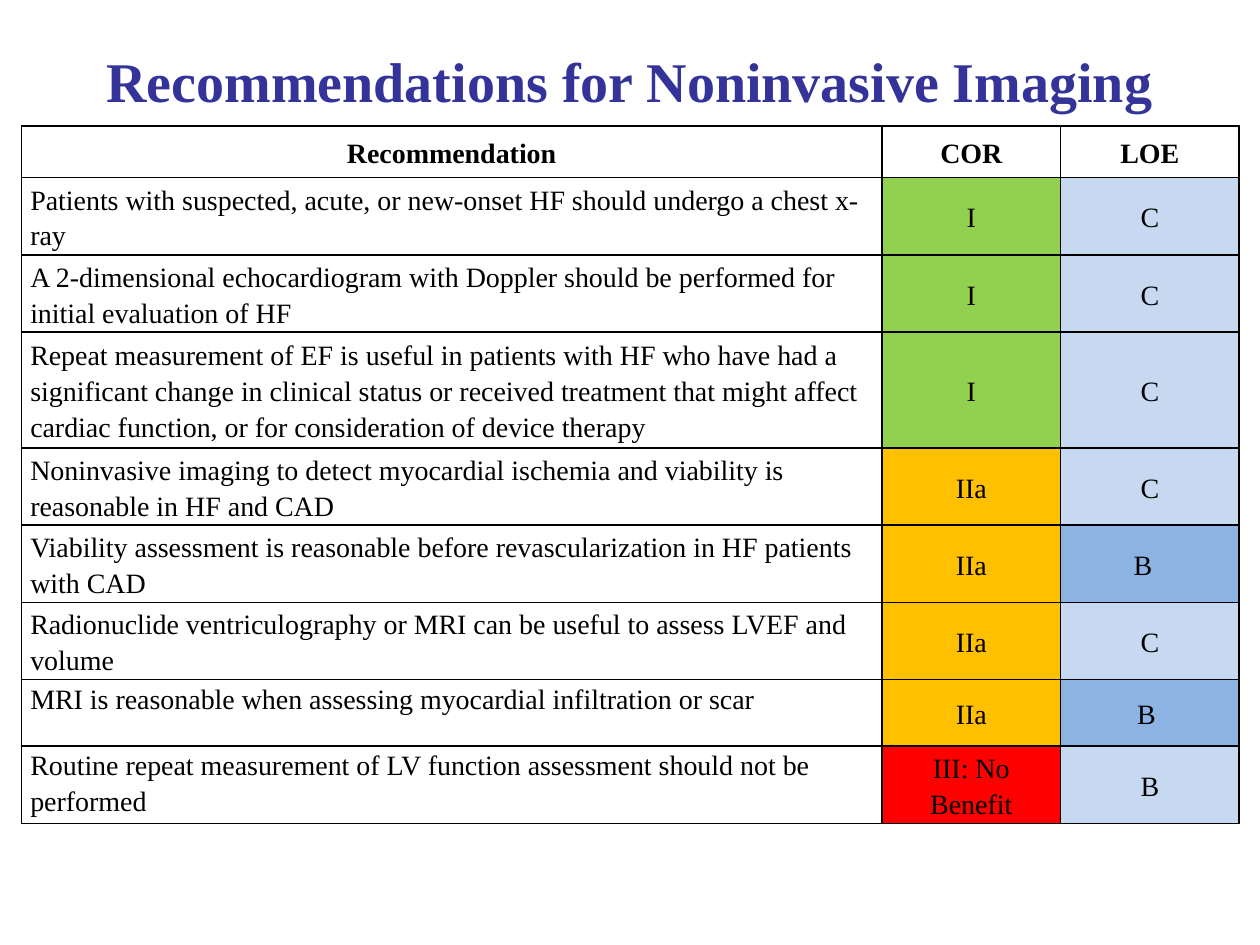
from dataclasses import dataclass
from typing import Optional

from lxml import etree
from pptx import Presentation
from pptx.dml.color import RGBColor
from pptx.enum import text
from pptx.oxml import ns
from pptx.util import Cm, Pt

BLACK = RGBColor(0x00, 0x00, 0x00)
WHITE = RGBColor(0xFF, 0xFF, 0xFF)
NAVY = RGBColor(0x33, 0x33, 0x99)
GREEN = RGBColor(0x92, 0xD0, 0x50)
AMBER = RGBColor(0xFF, 0xC0, 0x00)
RED = RGBColor(0xFF, 0x00, 0x00)
PALE_BLUE = RGBColor(0xC6, 0xD9, 0xF1)
MID_BLUE = RGBColor(0x8D, 0xB3, 0xE2)

FONT = "Times New Roman"
INSET = 0.18
COLUMN_WIDTHS = (17.35, 3.6, 3.6)
HEADER_HEIGHT = 1.04
CENTER, LEFT = text.PP_ALIGN.CENTER, text.PP_ALIGN.LEFT
MIDDLE, TOP = text.MSO_ANCHOR.MIDDLE, text.MSO_ANCHOR.TOP
COR_FILLS = {"I": GREEN, "IIa": AMBER, "III: No Benefit": RED}


@dataclass(frozen=True)
class Recommendation:
    wording: str
    cor: str
    loe: str
    loe_fill: RGBColor = PALE_BLUE
    loe_shift: float = 0
    height: float = 1.52
    anchor: text.MSO_ANCHOR = MIDDLE


RECOMMENDATIONS = (
    Recommendation("Patients with suspected, acute, or new-onset HF should undergo a chest x-ray", "I", "C"),
    Recommendation("A 2-dimensional echocardiogram with Doppler should be performed for "
                   "initial evaluation of HF", "I", "C"),
    Recommendation("Repeat measurement of EF is useful in patients with HF who have had a "
                   "significant change in clinical status or received treatment that might affect "
                   "cardiac function, or for consideration of device therapy", "I", "C", height=2.28),
    Recommendation("Noninvasive imaging to detect myocardial ischemia and viability is "
                   "reasonable in HF and CAD", "IIa", "C"),
    Recommendation("Viability assessment is reasonable before revascularization in HF patients "
                   "with CAD", "IIa", "B", MID_BLUE, loe_shift=0.28),
    Recommendation("Radionuclide ventriculography or MRI can be useful to assess LVEF and volume", "IIa", "C"),
    Recommendation("MRI is reasonable when assessing myocardial infiltration or scar", "IIa", "B",
                   MID_BLUE, loe_shift=0.14, height=1.34, anchor=TOP),
    Recommendation("Routine repeat measurement of LV function assessment should not be performed",
                   "III: No Benefit", "B", anchor=TOP),
)


def add_run(p, wording: str, size: float, color: RGBColor, bold: bool) -> None:
    r = p.add_run()
    r.text = wording
    r.font.name = FONT
    r.font.size = Pt(size)
    r.font.bold = bold
    r.font.color.rgb = color


def add_borders(cell) -> None:
    tc_pr = cell._tc.get_or_add_tcPr()
    for side in ("lnL", "lnR", "lnT", "lnB"):
        ln = etree.SubElement(tc_pr, ns.qn(f"a:{side}"), w=str(Pt(1)))
        fill = etree.SubElement(ln, ns.qn("a:solidFill"))
        etree.SubElement(fill, ns.qn("a:srgbClr"), val=str(BLACK))


def fill_cell(cell, wording: str, fill: Optional[RGBColor], align: text.PP_ALIGN = CENTER,
              anchor: text.MSO_ANCHOR = MIDDLE, bold: bool = False, shift: float = 0) -> None:
    add_borders(cell)
    if fill is None:
        cell.fill.background()
    else:
        cell.fill.solid()
        cell.fill.fore_color.rgb = fill
    cell.margin_left, cell.margin_right = Cm(INSET), Cm(INSET + shift)
    cell.margin_top = cell.margin_bottom = Cm(0)
    cell.vertical_anchor = anchor
    p = cell.text_frame.paragraphs[0]
    p.alignment = align
    p.line_spacing = 1.15
    add_run(p, wording, 16, BLACK, bold)


def add_title(s, wording: str) -> None:
    tf = s.shapes.add_textbox(Cm(1.27), Cm(0.03), Cm(22.86), Cm(3.17)).text_frame
    tf.word_wrap = True
    tf.vertical_anchor = MIDDLE
    p = tf.paragraphs[0]
    p.alignment = CENTER
    add_run(p, wording, 32, NAVY, True)


def add_recommendation_table(s) -> None:
    heights = [HEADER_HEIGHT] + [rec.height for rec in RECOMMENDATIONS]
    table = s.shapes.add_table(len(heights), len(COLUMN_WIDTHS), Cm(0.43), Cm(2.54),
                               Cm(sum(COLUMN_WIDTHS)), Cm(sum(heights))).table
    table.first_row = table.horz_banding = False
    for column, width in zip(table.columns, COLUMN_WIDTHS):
        column.width = Cm(width)
    for row, height in zip(table.rows, heights):
        row.height = Cm(height)
    for i, heading in enumerate(("Recommendation", "COR", "LOE")):
        fill_cell(table.cell(0, i), heading, WHITE, bold=True)
    for i, rec in enumerate(RECOMMENDATIONS, start=1):
        fill_cell(table.cell(i, 0), rec.wording, None, LEFT, rec.anchor)
        fill_cell(table.cell(i, 1), rec.cor, COR_FILLS[rec.cor])
        fill_cell(table.cell(i, 2), rec.loe, rec.loe_fill, shift=rec.loe_shift)


def main() -> None:
    prs = Presentation()
    prs.slide_width, prs.slide_height = Cm(25.4), Cm(19.05)
    s = prs.slides.add_slide(prs.slide_layouts[6])
    add_title(s, "Recommendations for Noninvasive Imaging")
    add_recommendation_table(s)
    prs.save("out.pptx")


if __name__ == "__main__":
    main()
